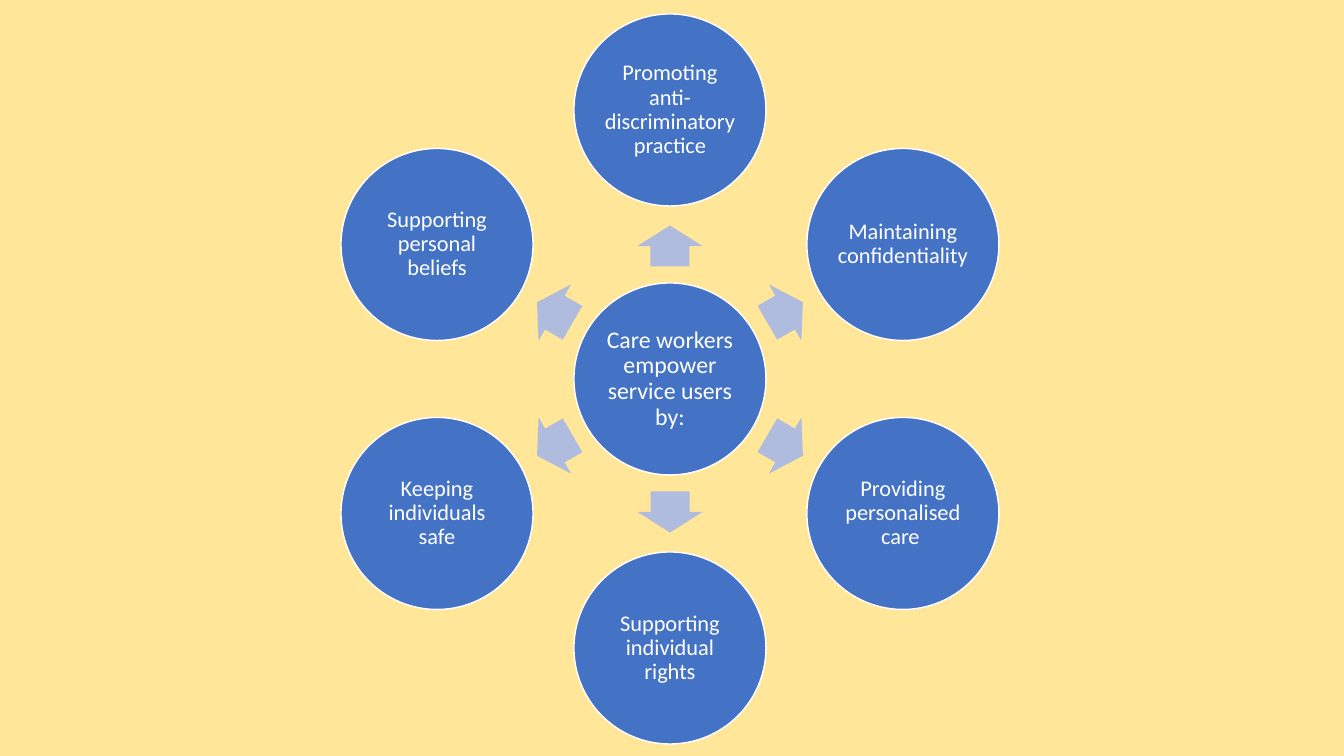
from math import cos, radians, sin

from pptx import Presentation
from pptx.dml.color import RGBColor
from pptx.enum.shapes import MSO_SHAPE as Kind
from pptx.enum.text import MSO_ANCHOR as Anchor, PP_ALIGN as Align
from pptx.util import Pt

HUB = "Care workers empower service users by:"
WAYS = [
    "Promoting anti-discriminatory practice",
    "Maintaining confidentiality",
    "Providing personalised care ",
    "Supporting individual rights",
    "Keeping individuals safe",
    "Supporting personal beliefs",
]
COLORS = {"back": "FFE699", "disc": "4472C4", "arrow": "B0BCDE", "white": "FFFFFF"}
FONT = "Calibri"

WIDE, HIGH = 1344, 756
MID_X, MID_Y = 670, 379
DISC = 192
ARROW = (41, 65)
RING, GAP = 269, 133
INSET = 2


def px(n):
    return round(n * 914400 / 100.8)


def color(name):
    return RGBColor.from_string(COLORS[name])


def place(kind, dist, turn, size, fill):
    wide, high = size
    x = MID_X + dist * cos(radians(turn)) - wide / 2
    y = MID_Y + dist * sin(radians(turn)) - high / 2
    shape = slide.shapes.add_shape(kind, px(x), px(y), px(wide), px(high))
    shape.shadow.inherit = False
    shape.fill.solid()
    shape.fill.fore_color.rgb = color(fill)
    return shape


def write(shape, text, *, size, ink="white"):
    frame = shape.text_frame
    frame.word_wrap = True
    frame.vertical_anchor = Anchor.MIDDLE
    frame.margin_left = frame.margin_right = px(INSET)
    frame.margin_top = frame.margin_bottom = px(INSET)
    para = frame.paragraphs[0]
    para.alignment = Align.CENTER
    para.line_spacing = 0.9
    run = para.add_run()
    run.text = text
    run.font.name = FONT
    run.font.size = Pt(size)
    run.font.color.rgb = color(ink)


def disc(text, *, size, dist=0, turn=0):
    shape = place(Kind.OVAL, dist, turn, (DISC, DISC), "disc")
    shape.line.color.rgb = color("white")
    shape.line.width = Pt(1)
    write(shape, text, size=size)


def arrow(turn):
    shape = place(Kind.RIGHT_ARROW, GAP, turn, ARROW, "arrow")
    shape.line.fill.background()
    shape.adjustments[0] = 0.6
    shape.adjustments[1] = 0.5
    shape.rotation = turn % 360


deck = Presentation()
deck.slide_width, deck.slide_height = px(WIDE), px(HIGH)
slide = deck.slides.add_slide(deck.slide_layouts[6])
slide.background.fill.solid()
slide.background.fill.fore_color.rgb = color("back")

disc(HUB, size=17)
for i, way in enumerate(WAYS):
    turn = i * 360 / len(WAYS) - 90
    arrow(turn)
    disc(way, size=16, dist=RING, turn=turn)

deck.save("out.pptx")
